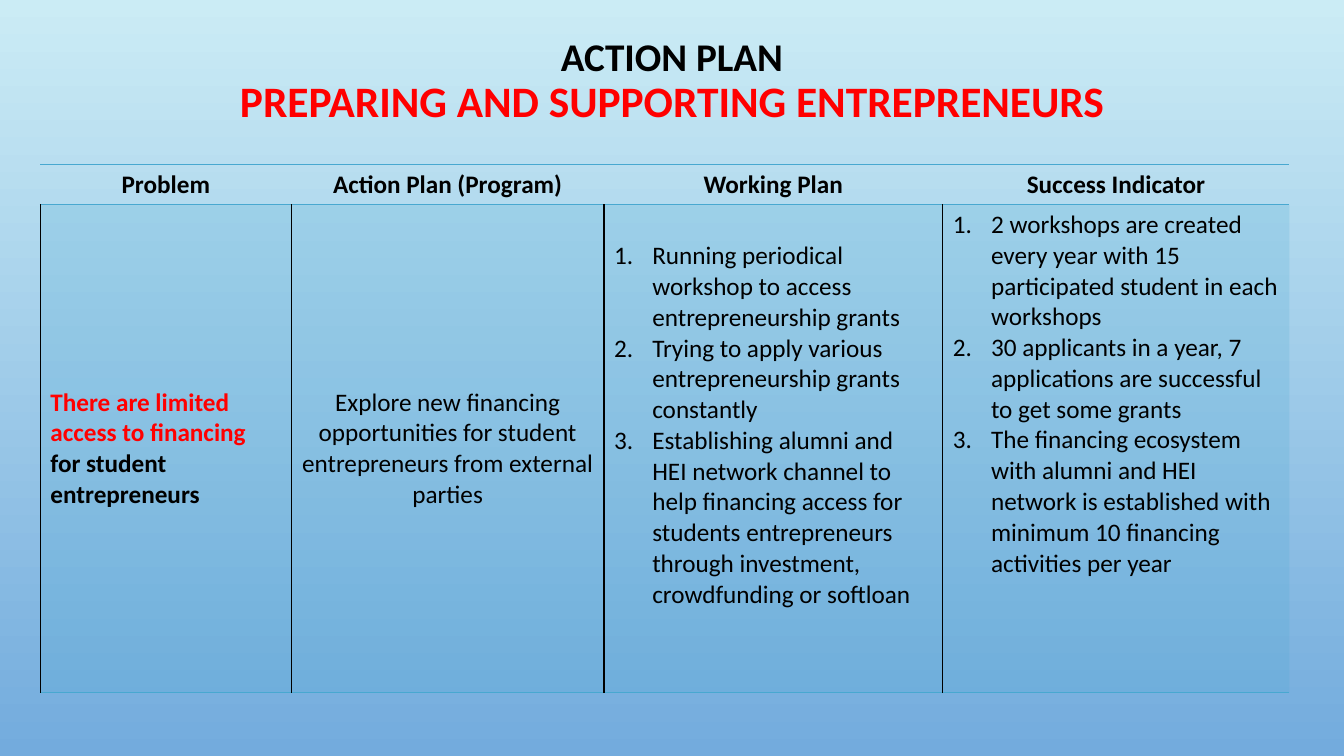
import pptx
import pptx.dml.color
import pptx.enum.text
import pptx.oxml
import pptx.oxml.ns
import pptx.util

Inches = pptx.util.Inches
Pt = pptx.util.Pt
RGBColor = pptx.dml.color.RGBColor
PP_ALIGN = pptx.enum.text.PP_ALIGN
MSO_ANCHOR = pptx.enum.text.MSO_ANCHOR
qn = pptx.oxml.ns.qn

BLACK = RGBColor(0x00, 0x00, 0x00)
RED = RGBColor(0xFF, 0x00, 0x00)
TEAL = RGBColor(0x48, 0xA8, 0xD0)
SKY_TOP = RGBColor(0xCB, 0xEC, 0xF5)
SKY_BOTTOM = RGBColor(0x73, 0xAB, 0xDD)

HEADERS = ["Problem", "Action Plan (Program)", "Working Plan", "Success Indicator"]
COLUMN_WIDTHS = [2.49, 3.1, 3.36, 3.44]
ROW_HEIGHTS = [0.4, 4.84]
PROBLEM = ["There are limited access to financing ", "for student entrepreneurs"]
PROGRAM = ("Explore new financing opportunities for student entrepreneurs "
           "from external parties")
WORKING_PLAN = [
    "Running periodical workshop to access entrepreneurship grants",
    "Trying to apply various entrepreneurship grants constantly",
    "Establishing alumni and HEI network channel to help financing access for "
    "students entrepreneurs through investment, crowdfunding or softloan",
]
SUCCESS_INDICATORS = [
    "2 workshops are created every year with 15 participated student in each workshops",
    "30 applicants in a year, 7 applications are successful to get some grants",
    "The financing ecosystem with alumni and HEI network is established with "
    "minimum 10 financing activities per year",
]


class SlideBuilder:
    font = "Calibri"
    size = 18

    def __init__(self, slide):
        self.slide = slide

    def style(self, r, size=None, color=BLACK, bold=False):
        r.font.name = self.font
        r.font.size = Pt(size or self.size)
        r.font.bold = bold
        r.font.color.rgb = color

    def background(self, top, bottom):
        fill = self.slide.background.fill
        fill.gradient()
        fill.gradient_angle = 270
        for stop, color in zip(fill.gradient_stops, (top, bottom)):
            stop.color.rgb = color

    def title(self, first, second, left, top, width, height):
        box = self.slide.shapes.add_textbox(
            Inches(left), Inches(top), Inches(width), Inches(height))
        tf = box.text_frame
        tf.word_wrap = True
        tf.vertical_anchor = MSO_ANCHOR.MIDDLE
        p = tf.paragraphs[0]
        p.text = first + "\v" + second
        p.alignment = PP_ALIGN.CENTER
        p.line_spacing = 0.9
        self.style(p.runs[0], 28, BLACK, True)
        self.style(p.runs[1], 31, RED, True)

    def table(self, left, top, widths, heights):
        table = self.slide.shapes.add_table(
            len(heights), len(widths), Inches(left), Inches(top),
            Inches(sum(widths)), Inches(sum(heights))).table
        table.first_row = False
        table.horz_banding = False
        for column, width in zip(table.columns, widths):
            column.width = Inches(width)
        for row, height in zip(table.rows, heights):
            row.height = Inches(height)
        return table

    def borders(self, cell, **colors):
        """Draw 1 pt lines on the sides given as L, R, T, B; clear the others."""
        tc_pr = cell._tc.get_or_add_tcPr()
        for index, side in enumerate("LRTB"):
            ln = pptx.oxml.parse_xml(
                f'<a:ln{side} {pptx.oxml.ns.nsdecls("a")} w="12700"/>')
            if side in colors:
                fill = ln.makeelement(qn("a:solidFill"), {})
                fill.append(ln.makeelement(qn("a:srgbClr"), {"val": str(colors[side])}))
            else:
                fill = ln.makeelement(qn("a:noFill"), {})
            ln.append(fill)
            tc_pr.insert(index, ln)

    def tint(self, cell, color, opacity):
        cell.fill.solid()
        cell.fill.fore_color.rgb = color
        clr = cell._tc.tcPr.find(".//" + qn("a:srgbClr"))
        clr.append(clr.makeelement(qn("a:alpha"), {"val": str(opacity * 1000)}))

    def centred(self, cell, text, bold=False):
        p = cell.text_frame.paragraphs[0]
        p.text = text
        p.alignment = PP_ALIGN.CENTER
        self.style(p.runs[0], bold=bold)

    def numbered(self, cell, items):
        tf = cell.text_frame
        tf.text = "\n".join(items)
        for p in tf.paragraphs:
            p_pr = p._p.get_or_add_pPr()
            p_pr.set("marL", str(Inches(0.38)))
            p_pr.set("indent", str(-Inches(0.38)))
            p_pr.append(p_pr.makeelement(qn("a:buAutoNum"), {"type": "arabicPeriod"}))
            self.style(p.runs[0])


def main():
    prs = pptx.Presentation()
    prs.slide_width = Inches(13.33)
    prs.slide_height = Inches(7.5)
    s = SlideBuilder(prs.slides.add_slide(prs.slide_layouts[6]))

    s.background(SKY_TOP, SKY_BOTTOM)
    s.title("ACTION PLAN", "PREPARING AND SUPPORTING ENTREPRENEURS",
            1, 0.31, 11.33, 1.02)

    table = s.table(0.4, 1.63, COLUMN_WIDTHS, ROW_HEIGHTS)
    last = len(HEADERS) - 1
    for col, header in enumerate(HEADERS):
        head, body = table.cell(0, col), table.cell(1, col)
        s.centred(head, header, bold=True)
        head.fill.background()
        s.borders(head, T=TEAL, B=TEAL)
        s.tint(body, TEAL, 20)
        sides = {"L": BLACK, "T": TEAL, "B": TEAL}
        if col < last:
            sides["R"] = BLACK
        s.borders(body, **sides)

    problem, program, working, success = table.rows[1].cells
    problem.vertical_anchor = program.vertical_anchor = MSO_ANCHOR.MIDDLE
    p = problem.text_frame.paragraphs[0]
    for text, color in zip(PROBLEM, (RED, BLACK)):
        r = p.add_run()
        r.text = text
        s.style(r, color=color, bold=True)
    s.centred(program, PROGRAM)
    working.margin_top = Inches(0.36)
    s.numbered(working, WORKING_PLAN)
    s.numbered(success, SUCCESS_INDICATORS)

    prs.save("out.pptx")


if __name__ == "__main__":
    main()
